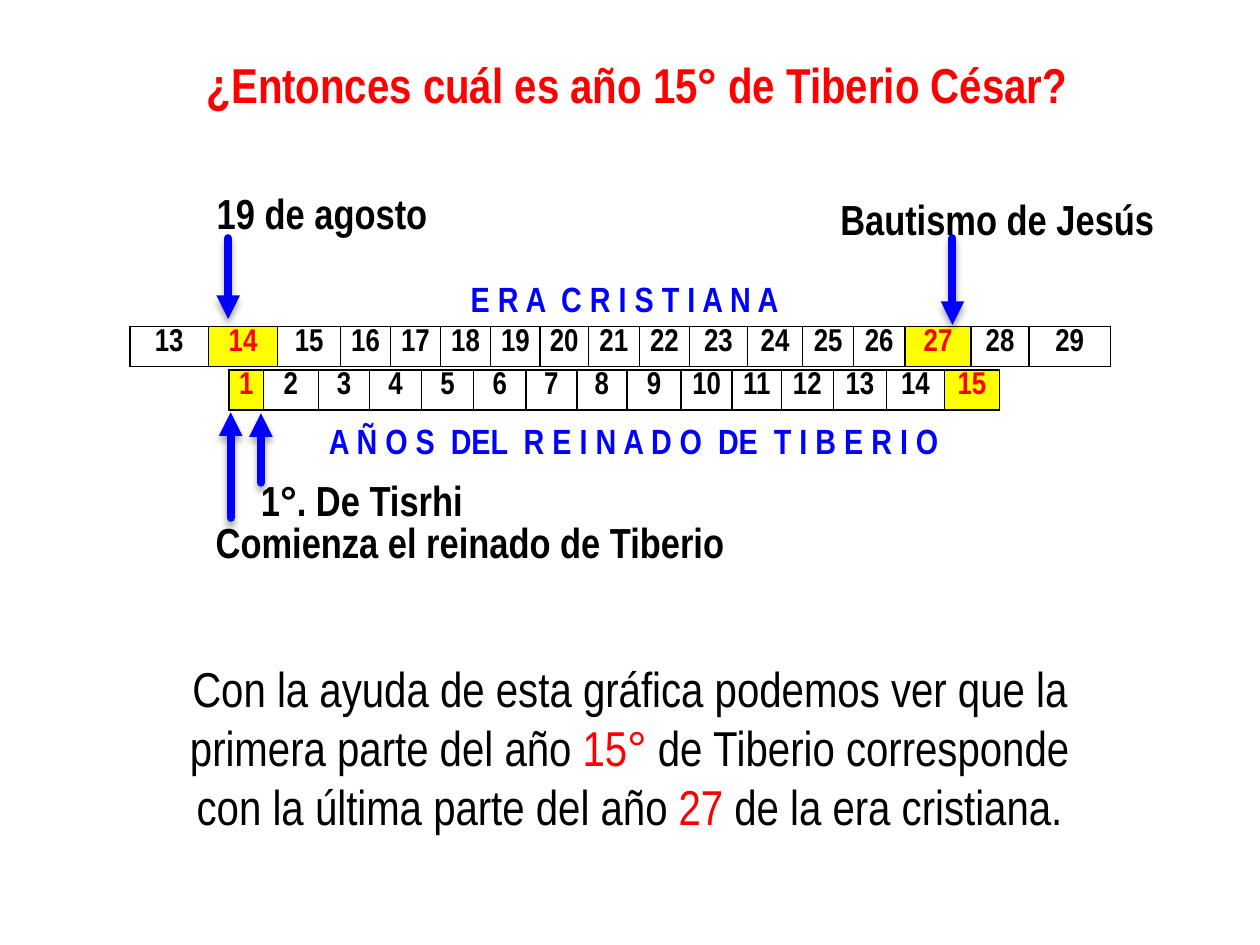
import dataclasses
import typing

import lxml.etree
import pptx
import pptx.dml.color
import pptx.enum.shapes
import pptx.enum.text
import pptx.oxml
import pptx.oxml.ns
import pptx.util

Cm = pptx.util.Cm
Pt = pptx.util.Pt
Align = pptx.enum.text.PP_ALIGN


@dataclasses.dataclass(frozen=True)
class Theme:
    font: str = "Arial Narrow"
    black: str = "000000"
    white: str = "FFFFFF"
    red: str = "FF0000"
    blue: str = "0000FF"
    yellow: str = "FFFF00"
    large: int = 28
    label: int = 24
    era: int = 20
    year: int = 18
    arrow: float = 4.5


THEME = Theme()


class Box(typing.NamedTuple):
    left: float
    top: float
    width: float
    height: float


class Label(typing.NamedTuple):
    text: str
    box: Box
    size: int = THEME.label
    color: str = THEME.black


class Arrow(typing.NamedTuple):
    x: float
    start: float
    end: float


class Band(typing.NamedTuple):
    left: float
    top: float
    widths: list[float]
    years: list[str]
    marked: set[str]


LABELS = [
    Label("19 de agosto", Box(4.12, 3.66, 5.3, 1.27)),
    Label("Comienza el reinado de Tiberio", Box(4.1, 10.29, 11.02, 1.27)),
    Label("Bautismo de Jesús", Box(16.69, 3.78, 6.91, 1.27)),
    Label("E R A  C R I S T I A N A", Box(9.24, 5.46, 8.05, 1.12), THEME.era, THEME.blue),
    Label("A Ñ O S  DEL  R E I N A D O  DE  T I B E R I O",
          Box(6.38, 8.33, 13.36, 1.12), THEME.era, THEME.blue),
    Label("1°. De Tisrhi", Box(5.01, 9.45, 4.67, 1.27)),
]

ARROWS = [
    Arrow(4.6, 4.8, 6.43),
    Arrow(4.65, 10.44, 8.31),
    Arrow(19.2, 4.8, 6.55),
    Arrow(5.26, 9.73, 8.33),
]

BANDS = [
    Band(2.62, 6.58,
         [1.58, 1.4, 1.27, 1, 1.01, 1.01, 1, 0.97, 1.03, 1.01, 1.17, 1.11,
          1.03, 1.03, 1.34, 1.16, 1.65],
         [str(year) for year in range(13, 30)], {"14", "27"}),
    Band(4.62, 7.46,
         [0.69, 1.11, 1.03, 1.05, 1.05, 1.05, 1.03, 1.01, 1.09, 1.03, 0.99,
          1.05, 1.07, 1.17, 1.11, 1.26],
         [str(year) for year in range(1, 16)] + [""], {"1", "15"}),
]


def tint(code: str) -> pptx.dml.color.RGBColor:
    """Turn a hex code into a colour."""
    return pptx.dml.color.RGBColor.from_string(code)


def place(box: Box) -> list[int]:
    """Give a box as lengths."""
    return [Cm(side) for side in box]


def write(frame, *parts: tuple[str, str], size: int, bold: bool = True,
          align=Align.LEFT, wrap: bool = True, spacing: float | None = None) -> None:
    """Fill a text frame with coloured parts in one paragraph."""
    frame.word_wrap = wrap
    line = frame.paragraphs[0]
    line.alignment = align
    line.line_spacing = spacing
    for text, color in parts:
        run = line.add_run()
        run.text = text
        run.font.name = THEME.font
        run.font.size = Pt(size)
        run.font.bold = bold
        run.font.color.rgb = tint(color)


def edge(cell, sides: str) -> None:
    """Draw black borders on the named sides of a cell."""
    props = cell._tc.get_or_add_tcPr()
    for spot, side in enumerate(sides):
        props.insert(spot, pptx.oxml.parse_xml(
            f'<a:ln{side} {pptx.oxml.ns.nsdecls("a")} w="{Pt(1)}"><a:solidFill>'
            f'<a:srgbClr val="{THEME.black}"/></a:solidFill></a:ln{side}>'))


def draw_band(slide, band: Band) -> None:
    """Draw one row of years as a table."""
    size = Box(band.left, band.top, sum(band.widths), 0.81)
    table = slide.shapes.add_table(1, len(band.years), *place(size)).table
    table.first_row = table.horz_banding = False
    for spot, (year, width) in enumerate(zip(band.years, band.widths)):
        table.columns[spot].width = Cm(width)
        cell = table.cell(0, spot)
        cell.margin_left = cell.margin_right = Cm(0.18)
        cell.margin_top = cell.margin_bottom = 0
        marked = year in band.marked
        if marked:
            cell.fill.solid()
            cell.fill.fore_color.rgb = tint(THEME.yellow)
        else:
            cell.fill.background()
        edge(cell, "LRTB" if year else "L")
        if year:
            write(cell.text_frame, (year, THEME.red if marked else THEME.black),
                  size=THEME.year, align=Align.CENTER, spacing=1.07)


def draw_arrow(slide, arrow: Arrow) -> None:
    """Draw an upright arrow with a soft shadow."""
    line = slide.shapes.add_connector(
        pptx.enum.shapes.MSO_CONNECTOR.STRAIGHT,
        Cm(arrow.x), Cm(arrow.start), Cm(arrow.x), Cm(arrow.end))
    line.line.color.rgb = tint(THEME.blue)
    line.line.width = Pt(THEME.arrow)
    stroke = line.line._get_or_add_ln()
    stroke.set("cap", "rnd")
    lxml.etree.SubElement(stroke, pptx.oxml.ns.qn("a:tailEnd"), type="triangle")
    line._element.spPr.append(pptx.oxml.parse_xml(
        f'<a:effectLst {pptx.oxml.ns.nsdecls("a")}>'
        f'<a:outerShdw blurRad="{Pt(4)}" dist="{Pt(3)}" dir="5400000" rotWithShape="0">'
        f'<a:srgbClr val="{THEME.black}"><a:alpha val="35000"/></a:srgbClr>'
        '</a:outerShdw></a:effectLst>'))


def draw_label(slide, label: Label) -> None:
    """Draw a bold one-line label."""
    box = slide.shapes.add_textbox(*place(label.box))
    write(box.text_frame, (label.text, label.color), size=label.size, wrap=False)


def draw_title(slide) -> None:
    """Draw the question at the top."""
    shape = slide.shapes.add_shape(pptx.enum.shapes.MSO_SHAPE.RECTANGLE,
                                   *place(Box(3.68, 0.97, 18.31, 1.45)))
    shape.shadow.inherit = False
    shape.fill.solid()
    shape.fill.fore_color.rgb = tint(THEME.white)
    shape.line.fill.background()
    shape.text_frame.vertical_anchor = pptx.enum.text.MSO_ANCHOR.TOP
    write(shape.text_frame, ("¿Entonces cuál es año 15° de Tiberio César?", THEME.red),
          size=THEME.large, align=Align.CENTER)


def draw_answer(slide) -> None:
    """Draw the closing sentence."""
    box = slide.shapes.add_textbox(*place(Box(3, 13.16, 19.38, 3.84)))
    write(box.text_frame,
          ("Con la ayuda de esta gráfica podemos ver que la primera parte del año ", THEME.black),
          ("15° ", THEME.red),
          ("de Tiberio corresponde con la última parte del año ", THEME.black),
          ("27 ", THEME.red),
          ("de la era cristiana.", THEME.black),
          size=THEME.large, bold=False, align=Align.CENTER)


def main() -> None:
    """Build and save the slide."""
    deck = pptx.Presentation()
    deck.slide_width, deck.slide_height = Cm(25.4), Cm(19.05)
    slide = deck.slides.add_slide(deck.slide_layouts[6])
    for band in BANDS:
        draw_band(slide, band)
    draw_title(slide)
    draw_answer(slide)
    for arrow in ARROWS:
        draw_arrow(slide, arrow)
    for label in LABELS:
        draw_label(slide, label)
    deck.save("out.pptx")


if __name__ == "__main__":
    main()
